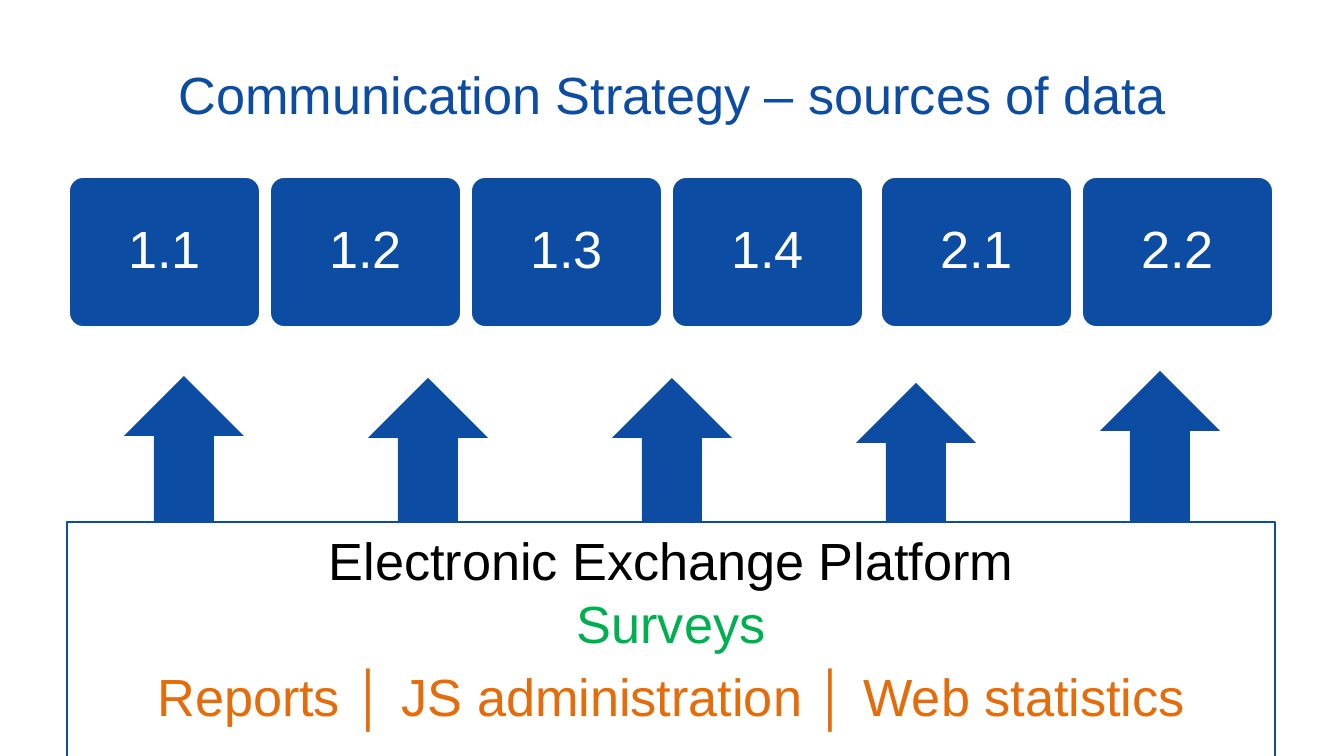
from pptx import Presentation
from pptx.dml.color import RGBColor
from pptx.enum.shapes import MSO_SHAPE
from pptx.enum.text import MSO_ANCHOR, PP_ALIGN
from pptx.util import Emu, Pt

SCALE = 914400 / 134.4
COLORS = {
    "blue": "0C4CA3",
    "white": "FFFFFF",
    "black": "000000",
    "green": "00B050",
    "orange": "E46C0A",
}


def px(length):
    return Emu(round(length * SCALE))


def write(para, text, color="black", size=28, font="Arial"):
    para.alignment = PP_ALIGN.CENTER
    span = para.add_run()
    span.text = text
    span.font.size = Pt(size)
    span.font.name = font
    span.font.color.rgb = RGBColor.from_string(COLORS[color])


deck = Presentation()
deck.slide_width = px(1344)
deck.slide_height = px(756)
page = deck.slides.add_slide(deck.slide_layouts[6])
blue = RGBColor.from_string(COLORS["blue"])
white = RGBColor.from_string(COLORS["white"])

for index, top in enumerate([376, 378, 378, 383, 371]):
    arrow = page.shapes.add_shape(
        MSO_SHAPE.UP_ARROW, px(124 + 244 * index), px(top), px(120), px(187)
    )
    arrow.shadow.inherit = False
    arrow.fill.solid()
    arrow.fill.fore_color.rgb = blue
    arrow.line.fill.background()

title = page.shapes.add_textbox(px(67), px(31), px(1210), px(126))
title.text_frame.word_wrap = True
title.text_frame.vertical_anchor = MSO_ANCHOR.MIDDLE
write(title.text_frame.paragraphs[0], "Communication Strategy – sources of data", color="blue")

for index, label in enumerate(["1.1", "1.2", "1.3", "1.4", "2.1", "2.2"]):
    group_gap = 8 if label.startswith("2") else 0
    card = page.shapes.add_shape(
        MSO_SHAPE.ROUNDED_RECTANGLE,
        px(68 + 201 * index + group_gap), px(176), px(193), px(152),
    )
    card.adjustments[0] = 0.1
    card.shadow.inherit = False
    card.fill.solid()
    card.fill.fore_color.rgb = blue
    card.line.color.rgb = white
    card.line.width = Pt(2)
    card.text_frame.vertical_anchor = MSO_ANCHOR.MIDDLE
    para = card.text_frame.paragraphs[0]
    para.line_spacing = 0.9
    write(para, label, color="white")

platform = page.shapes.add_shape(MSO_SHAPE.RECTANGLE, px(67), px(522), px(1208), px(263))
platform.shadow.inherit = False
platform.fill.solid()
platform.fill.fore_color.rgb = white
platform.line.color.rgb = blue
platform.line.width = Pt(0.75)
frame = platform.text_frame
frame.word_wrap = True
frame.vertical_anchor = MSO_ANCHOR.TOP
para = frame.paragraphs[0]
write(para, "Electronic Exchange Platform")
para.add_line_break()
write(para, "Surveys", color="green")
para = frame.add_paragraph()
para.space_before = Pt(5.6)
write(para, "Reports │ JS administration │ Web statistics", color="orange")

deck.save("out.pptx")
